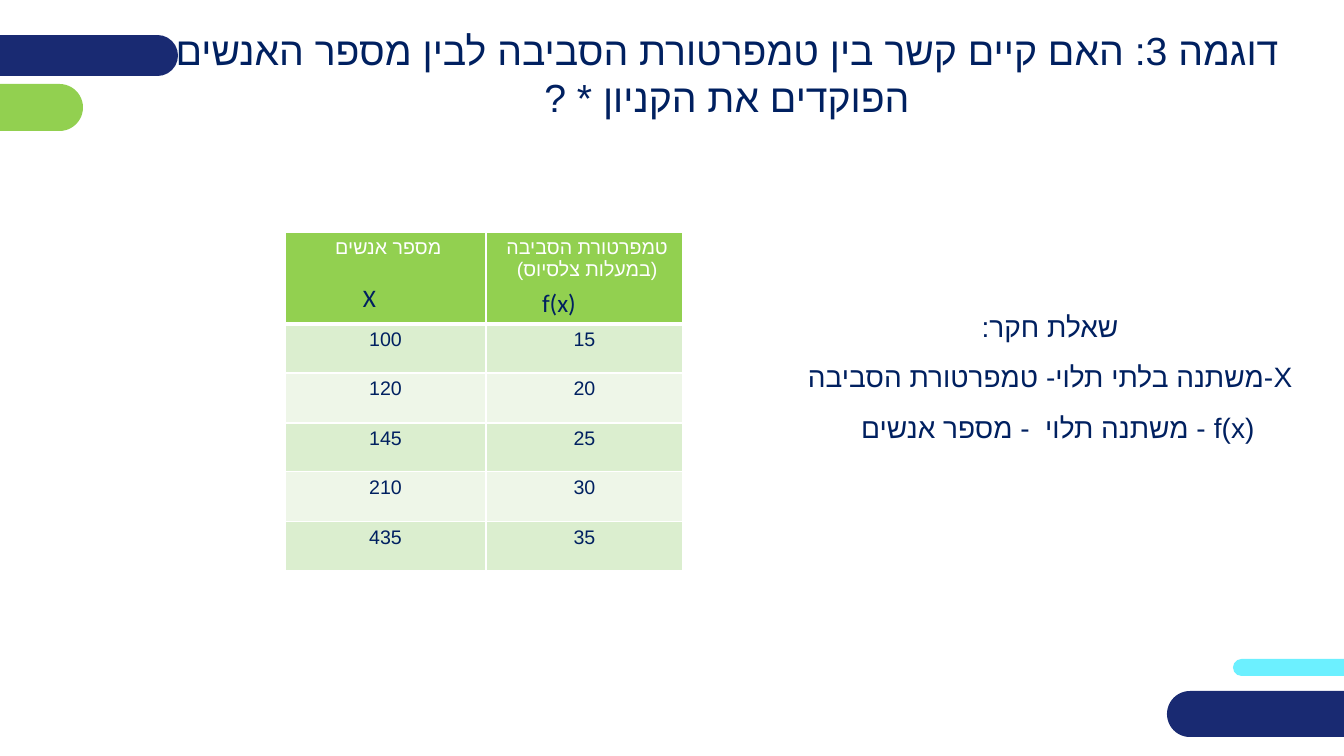
from lxml import etree
from pptx import Presentation
from pptx import util as u
from pptx.dml.color import RGBColor
from pptx.enum import shapes, text
from pptx.oxml.ns import qn

NAVY, GREEN, CYAN, INK, WHITE = "192A72", "92D050", "6CF0FF", "002060", "FFFFFF"
BANDS = ["DBEECF", "EEF6E8"]
BARS = [
    (1233, 659, 175, 17, CYAN),
    (-45, 84, 128, 47, GREEN),
    (-53, 35, 231, 41, NAVY),
    (1167, 691, 242, 46, NAVY),
]
TITLE = ["דוגמה 3: האם קיים קשר בין טמפרטורת הסביבה לבין מספר האנשים הפוקדים את הקניון * ?"]
QUESTION = [
    "שאלת חקר:",
    " X-משתנה בלתי תלוי- טמפרטורת הסביבה ",
    "(f(x - משתנה תלוי  - מספר אנשים  ",
]
HEADER = [["מספר אנשים "], ["טמפרטורת הסביבה ", "(במעלות צלסיוס) "]]
DATA = [(100, 15), (120, 20), (145, 25), (210, 30), (435, 35)]
COLS = [201, 197]
ROWS = [92, 49, 50, 49, 50, 49]
CENTER, RIGHT, LEFT = text.PP_ALIGN.CENTER, text.PP_ALIGN.RIGHT, text.PP_ALIGN.LEFT


def px(n):
    return u.Emu(round(n * 914400 / 100.8))


def rgb(value):
    return RGBColor.from_string(value)


def write(tf, lines, size, color, font="Arial", align=CENTER, rtl=True, spacing=None):
    for i, line in enumerate(lines):
        p = tf.paragraphs[0] if i == 0 else tf.add_paragraph()
        p.alignment = align
        if rtl:
            p._p.get_or_add_pPr().set("rtl", "1")
        if spacing:
            p.line_spacing = spacing
        r = p.add_run()
        r.text = line
        r.font.size = u.Pt(size)
        r.font.name = font
        r.font.bold = False
        r.font.color.rgb = rgb(color)
        etree.SubElement(r._r.get_or_add_rPr(), qn("a:cs")).set("typeface", font)


def add_text(s, box, lines, size, anchor=text.MSO_ANCHOR.MIDDLE, wrap=True, inset=10, **style):
    tf = s.shapes.add_textbox(*map(px, box)).text_frame
    tf.word_wrap = wrap
    tf.vertical_anchor = anchor
    tf.margin_left = tf.margin_right = px(inset)
    write(tf, lines, size, INK, **style)


def set_borders(cell, bottom):
    tcPr = cell._tc.get_or_add_tcPr()
    for i, (side, width) in enumerate([("L", 1), ("R", 1), ("T", 1), ("B", bottom)]):
        ln = etree.Element(qn("a:ln" + side), w=str(u.Pt(width)))
        fill = etree.SubElement(ln, qn("a:solidFill"))
        etree.SubElement(fill, qn("a:srgbClr")).set("val", WHITE)
        tcPr.insert(i, ln)


def add_grid(s):
    rows = [HEADER] + [[[str(v)] for v in row] for row in DATA]
    box = (285, 232, sum(COLS), sum(ROWS))
    table = s.shapes.add_table(len(rows), len(COLS), *map(px, box)).table
    for col, width in zip(table.columns, COLS):
        col.width = px(width)
    for i, row in enumerate(rows):
        head = i == 0
        table.rows[i].height = px(ROWS[i])
        for j, lines in enumerate(row):
            cell = table.cell(i, j)
            cell.fill.solid()
            cell.fill.fore_color.rgb = rgb(GREEN if head else BANDS[(i - 1) % 2])
            set_borders(cell, 3 if head else 1)
            write(cell.text_frame, lines, 14, WHITE if head else INK)


def main():
    prs = Presentation()
    prs.slide_width, prs.slide_height = px(1344), px(756)
    s = prs.slides.add_slide(prs.slide_layouts[6])
    for *box, color in BARS:
        sp = s.shapes.add_shape(shapes.MSO_SHAPE.ROUNDED_RECTANGLE, *map(px, box))
        sp.adjustments[0] = 0.5
        sp.shadow.inherit = False
        sp.fill.solid()
        sp.fill.fore_color.rgb = rgb(color)
        sp.line.fill.background()
    add_text(s, (167, 38, 1120, 71), TITLE, 28, inset=0)
    add_grid(s)
    add_text(s, (785, 310, 530, 116), QUESTION, 20, spacing=1.5)
    top = text.MSO_ANCHOR.TOP
    add_text(s, (353, 277, 33, 40), ["X "], 18, top, wrap=False, font="Calibri", align=RIGHT)
    add_text(s, (532, 282, 73, 40), ["f(x)"], 18, top, font="Calibri", align=LEFT, rtl=False)
    prs.save("out.pptx")


if __name__ == "__main__":
    main()
